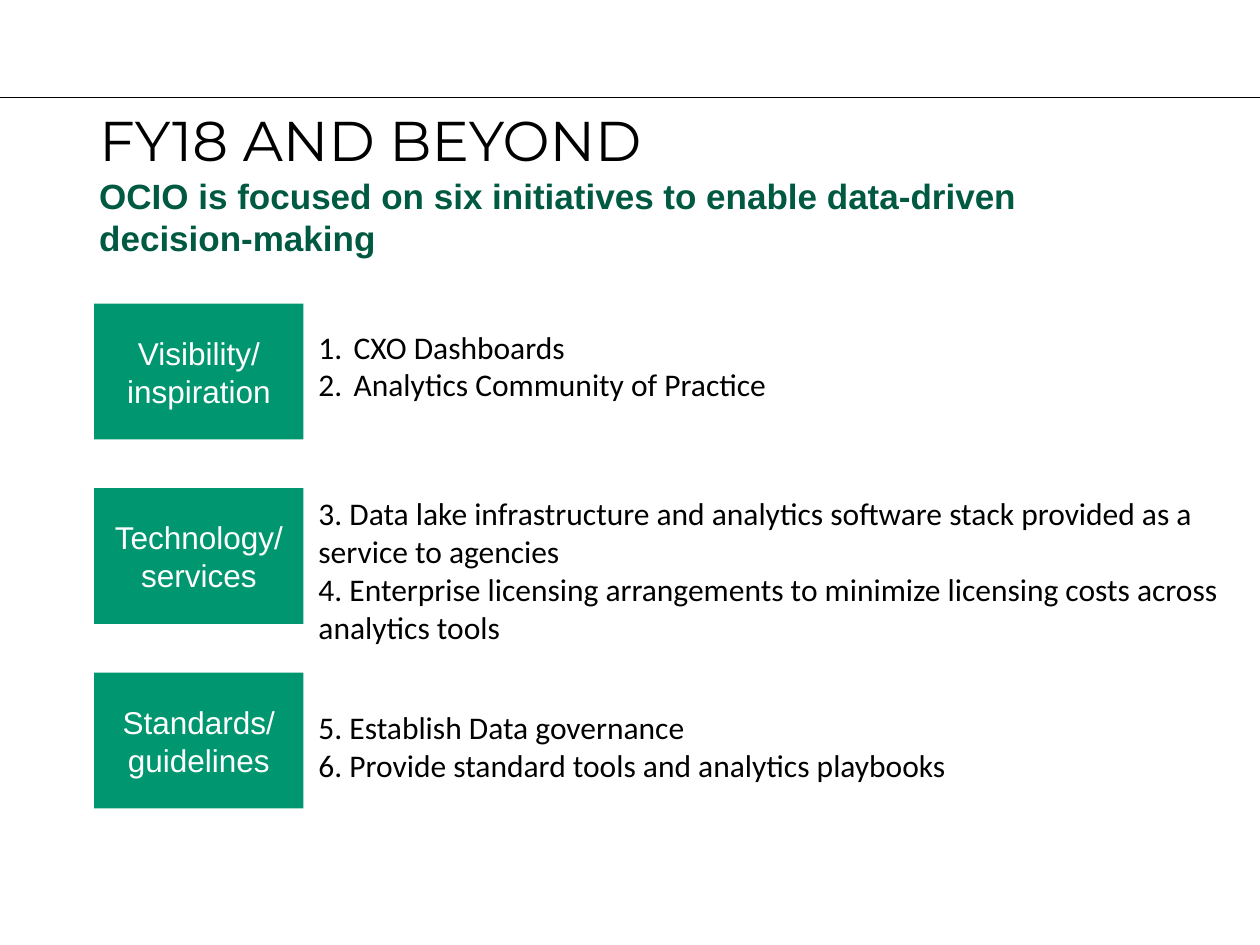
from pptx import Presentation
from pptx import util as u
from pptx.dml.color import RGBColor
from pptx.enum import shapes, text
from pptx.oxml import parse_xml
from pptx.oxml.ns import nsdecls

BLACK = RGBColor(0, 0, 0)
WHITE = RGBColor(255, 255, 255)
DARK = RGBColor(0x00, 0x59, 0x41)
GREEN = RGBColor(0x00, 0x96, 0x6F)

HEAD = {"name": "Montserrat", "size": u.Pt(32), "color": BLACK}
LEAD = {"name": "Arial", "size": u.Pt(20), "color": DARK, "bold": True}
LABEL = {"name": "Arial", "size": u.Pt(18), "color": WHITE}
NOTE = {"name": "Calibri", "size": u.Pt(18), "color": BLACK}

# Label lines, note lines, note offset and height in cm, automatic numbers
ROWS = [
    (["Visibility/ inspiration"],
     ["CXO Dashboards", "Analytics Community of Practice"], 0.36, 2.57, True),
    (["Technology/", "services"],
     ["3. Data lake infrastructure and analytics software stack "
      "provided as a service to agencies",
      "4. Enterprise licensing arrangements to minimize licensing costs "
      "across analytics tools"], 0, 3.33, False),
    (["Standards/ guidelines"],
     ["5. Establish Data governance",
      "6. Provide standard tools and analytics playbooks"], 0.59, 2.57, False),
]


def style(font, form):
    for key, val in form.items():
        if key == "color":
            font.color.rgb = val
        else:
            setattr(font, key, val)


def number(para):
    props = para._p.get_or_add_pPr()
    props.set("marL", str(u.Cm(0.71)))
    props.set("indent", str(-u.Cm(0.71)))
    props.append(parse_xml(
        f'<a:buFont {nsdecls("a")} typeface="+mj-lt"/>'))
    props.append(parse_xml(
        f'<a:buAutoNum {nsdecls("a")} type="arabicPeriod"/>'))


def write(frame, lines, form, align=text.PP_ALIGN.LEFT, auto=False):
    frame.word_wrap = True
    for i, line in enumerate(lines):
        para = frame.paragraphs[0] if i == 0 else frame.add_paragraph()
        para.alignment = align
        if auto:
            number(para)
        run = para.add_run()
        run.text = line
        style(run.font, form)


def add_text(slide, box, lines, form, auto=False):
    shape = slide.shapes.add_textbox(*map(u.Cm, box))
    write(shape.text_frame, lines, form, auto=auto)
    shape.text_frame.auto_size = text.MSO_AUTO_SIZE.SHAPE_TO_FIT_TEXT


def add_head(slide, left, top, width):
    # Rule across the slide
    rule = slide.shapes.add_connector(
        shapes.MSO_CONNECTOR.STRAIGHT, 0, u.Cm(top), u.Cm(25.4), u.Cm(top))
    rule.line.color.rgb = BLACK
    rule.line.width = u.Pt(0.5)
    rule._element.spPr.append(parse_xml(f'<a:effectLst {nsdecls("a")}/>'))

    # Title
    title = slide.shapes.title
    title.left, title.top = u.Cm(left), u.Cm(top + 0.15)
    title.width, title.height = u.Cm(width), u.Cm(1.57)
    frame = title.text_frame
    frame.auto_size = text.MSO_AUTO_SIZE.NONE
    frame.vertical_anchor = text.MSO_ANCHOR.MIDDLE
    write(frame, ["FY18 AND BEYOND"], HEAD)
    frame.paragraphs[0].line_spacing = 0.9

    # Subtitle
    add_text(slide, (left, top + 1.44, 21.89, 1.96),
             ["OCIO is focused on six initiatives to enable data-driven "
              "decision-making"], LEAD)


def add_row(slide, left, top, row):
    label, notes, shift, high, auto = row
    # Green label
    tile = slide.shapes.add_shape(
        shapes.MSO_SHAPE.RECTANGLE,
        *map(u.Cm, (left, top, 4.22, 2.74)))
    tile.shadow.inherit = False
    tile.fill.solid()
    tile.fill.fore_color.rgb = GREEN
    tile.line.fill.background()
    tile.text_frame.vertical_anchor = text.MSO_ANCHOR.MIDDLE
    write(tile.text_frame, label, LABEL, text.PP_ALIGN.CENTER)

    # Initiatives
    add_text(slide, (left + 4.27, top + shift, 18.77, high), notes, NOTE, auto)


def main():
    deck = Presentation()
    deck.slide_width, deck.slide_height = u.Cm(25.4), u.Cm(19.05)
    slide = deck.slides.add_slide(deck.slide_layouts[5])
    add_head(slide, 1.75, 1.96, 23.22)
    for i, row in enumerate(ROWS):
        add_row(slide, 1.9, 6.12 + i * 3.72, row)
    deck.save("out.pptx")


if __name__ == "__main__":
    main()
